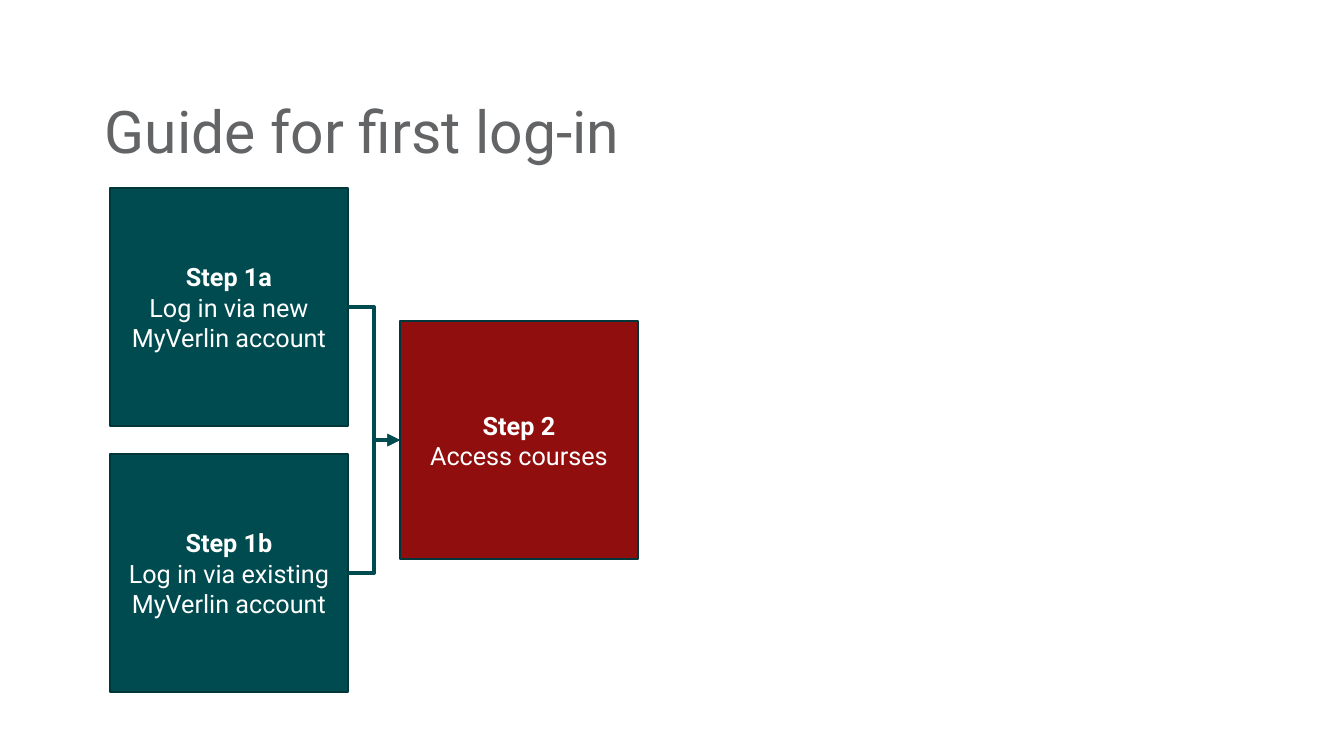
import pptx
import pptx.util
import pptx.dml.color
import pptx.enum.shapes
import pptx.enum.text
import lxml.etree
from pptx.oxml.ns import qn

Cm = pptx.util.Cm
Pt = pptx.util.Pt
TEAL = "004B4F"
RED = "900F0E"
EDGE = "00373A"
GREY = "636466"
WHITE = "FFFFFF"


def shade(text):
    """Return the colour for a hex string."""
    return pptx.dml.color.RGBColor.from_string(text)


def style(para, size, color, bold=False):
    """Set the font of a whole paragraph."""
    font = para.font
    font.name = "Roboto"
    font.size = Pt(size)
    font.bold = bold
    font.color.rgb = shade(color)


def title(slide, text, left, top, width, height):
    """Place the heading in its box."""
    frame = slide.shapes.add_textbox(left, top, width, height).text_frame
    frame.word_wrap = True
    frame.margin_left = 0
    frame.vertical_anchor = pptx.enum.text.MSO_ANCHOR.MIDDLE
    para = frame.paragraphs[0]
    para.text = text
    para.line_spacing = 0.9
    style(para, 42, GREY)


def step(slide, name, task, fill, left, top, side):
    """Draw a square with a bold step name above its task."""
    card = slide.shapes.add_shape(
        pptx.enum.shapes.MSO_SHAPE.RECTANGLE, left, top, side, side)
    card.shadow.inherit = False
    card.fill.solid()
    card.fill.fore_color.rgb = shade(fill)
    card.line.color.rgb = shade(EDGE)
    card.line.width = Pt(1)
    frame = card.text_frame
    frame.word_wrap = True
    frame.vertical_anchor = pptx.enum.text.MSO_ANCHOR.MIDDLE
    frame.text = f"{name}\n{task}"
    for para, bold in zip(frame.paragraphs, (True, False)):
        para.alignment = pptx.enum.text.PP_ALIGN.CENTER
        style(para, 18, WHITE, bold)
    return card


def link(slide, start, end):
    """Join the right side of one card to the left side of another."""
    line = slide.shapes.add_connector(
        pptx.enum.shapes.MSO_CONNECTOR.ELBOW, 0, 0, 0, 0)
    line.begin_connect(start, 3)
    line.end_connect(end, 1)
    line.line.color.rgb = shade(TEAL)
    line.line.width = Pt(3)
    lxml.etree.SubElement(
        line.line._get_or_add_ln(), qn("a:tailEnd"), type="triangle")
    lxml.etree.SubElement(line._element.spPr, qn("a:effectLst"))


def flow(slide, left, top, width, height):
    """Lay out two ways to log in that lead to one last step."""
    side = Cm(6)
    low = top + height - side
    first = step(slide, "Step 1a", "Log in via new MyVerlin account",
                 TEAL, left, top, side)
    last = step(slide, "Step 2", "Access courses", RED,
                left + width - side, (top + low) // 2, side)
    other = step(slide, "Step 1b", "Log in via existing MyVerlin account",
                 TEAL, left, low, side)
    for card in (other, first):
        link(slide, card, last)


def main():
    """Build and save the slide."""
    deck = pptx.Presentation()
    deck.slide_width = Cm(33.87)
    deck.slide_height = Cm(19.05)
    slide = deck.slides.add_slide(deck.slide_layouts[6])
    title(slide, "Guide for first log-in",
          Cm(2.64), Cm(2.51), Cm(24.54), Cm(1.78))
    flow(slide, Cm(2.77), Cm(4.74), Cm(13.31), Cm(12.7))
    deck.save("out.pptx")


if __name__ == "__main__":
    main()
